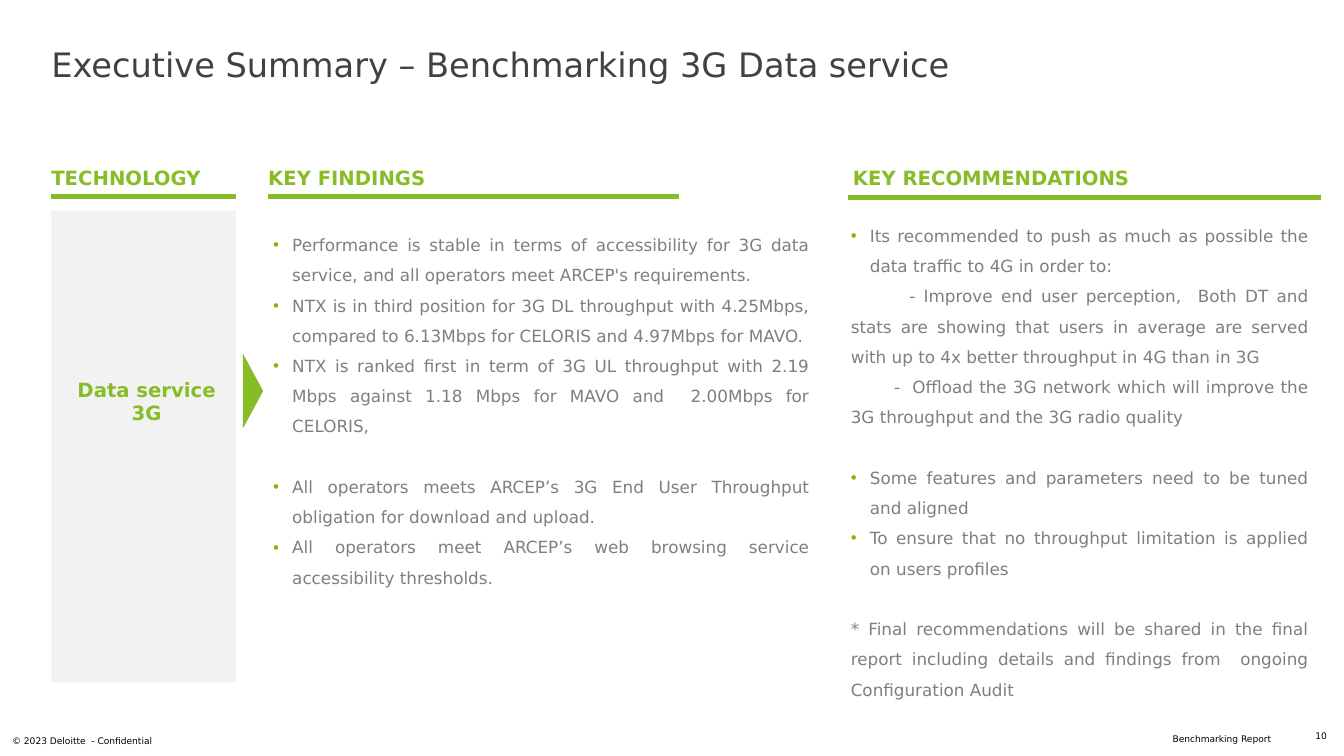
import pptx
import pptx.dml.color
import pptx.enum.shapes
import pptx.enum.text
import pptx.oxml.ns
import pptx.util
from lxml import etree

Inches = pptx.util.Inches
Pt = pptx.util.Pt
RGBColor = pptx.dml.color.RGBColor
ALIGN = pptx.enum.text.PP_ALIGN
ANCHOR = pptx.enum.text.MSO_ANCHOR
SHAPE = pptx.enum.shapes.MSO_SHAPE

GREEN = RGBColor(0x86, 0xBC, 0x25)
BULLET_GREEN = RGBColor(0x81, 0xBC, 0x00)
BODY_GRAY = RGBColor(0x7F, 0x7F, 0x7F)
TITLE_GRAY = RGBColor(0x41, 0x41, 0x41)
PANEL_GRAY = RGBColor(0xF2, 0xF2, 0xF2)
BLACK = RGBColor(0, 0, 0)
FONT = "DejaVu Sans"
BULLET_INDENT = 0.19
BLANK_LINE = 21.6

TITLE = "Executive Summary – Benchmarking 3G Data service"
TECHNOLOGY = "Data service 3G"

# heading, text left, rule left, rule right, rule top
HEADINGS = [
    ("TECHNOLOGY", 0.51, 0.51, 2.34, 1.95),
    ("KEY FINDINGS", 2.66, 2.66, 6.73, 1.95),
    ("KEY RECOMMENDATIONS", 8.46, 8.41, 13.1, 1.96),
]

# text, bulleted, first-line indent, space before
FINDINGS = [
    ("Performance is stable in terms of accessibility for 3G data service, and all operators meet ARCEP's requirements.", True, 0, 0),
    ("NTX is in third position for 3G DL throughput with 4.25Mbps, compared to 6.13Mbps for CELORIS and 4.97Mbps for MAVO.", True, 0, 0),
    ("NTX is ranked first in term of 3G UL throughput with 2.19 Mbps against 1.18 Mbps for MAVO and  2.00Mbps for CELORIS,", True, 0, 0),
    ("All operators meets ARCEP’s 3G End User Throughput obligation for download and upload.", True, 0, BLANK_LINE),
    ("All operators meet ARCEP’s web browsing service accessibility thresholds.", True, 0, 0),
]
RECOMMENDATIONS = [
    ("Its recommended to push as much as possible the data traffic to 4G in order to:", True, 0, 0),
    ("- Improve end user perception,  Both DT and stats are showing that users in average are served with up to 4x better throughput in 4G than in 3G", False, 0.58, 0),
    ("-  Offload the 3G network which will improve the 3G throughput and the 3G radio quality", False, 0.43, 0),
    ("Some features and parameters need to be tuned and aligned", True, 0, BLANK_LINE),
    ("To ensure that no throughput limitation is applied on users profiles", True, 0, 0),
    ("* Final recommendations will be shared in the final report including details and findings from  ongoing Configuration Audit", False, 0, BLANK_LINE),
]
BODIES = [
    (FINDINGS, (2.61, 2.18, 5.52, 5.23)),
    (RECOMMENDATIONS, (8.34, 2.09, 4.74, 4.43)),
]
FOOTERS = [
    ("Benchmarking Report", (11.63, 7.28, 1.71, 0.11), ALIGN.LEFT),
    ("10", (12.82, 7.25, 0.34, 0.11), ALIGN.RIGHT),
    ("© 2023 Deloitte  - Confidential", (0.12, 7.3, 4.5, 0.11), ALIGN.LEFT),
]


def set_margins(text_frame, left, top, right, bottom):
    text_frame.margin_left = Inches(left)
    text_frame.margin_top = Inches(top)
    text_frame.margin_right = Inches(right)
    text_frame.margin_bottom = Inches(bottom)


def style_runs(paragraph, size, color, bold=False):
    for run in paragraph.runs:
        run.font.name = FONT
        run.font.size = Pt(size)
        run.font.bold = bold
        run.font.color.rgb = color


def add_text_box(slide, box):
    text_frame = slide.shapes.add_textbox(*map(Inches, box)).text_frame
    text_frame.word_wrap = True
    return text_frame


def add_label(slide, text, box, size, color, bold=False, align=ALIGN.LEFT, spacing=1.0):
    text_frame = add_text_box(slide, box)
    set_margins(text_frame, 0, 0, 0, 0)
    text_frame.text = text
    paragraph = text_frame.paragraphs[0]
    paragraph.alignment = align
    paragraph.line_spacing = spacing
    style_runs(paragraph, size, color, bold)


def set_indent(paragraph, bulleted, first_line):
    properties = paragraph._p.get_or_add_pPr()
    if bulleted:
        properties.set("marL", str(Inches(BULLET_INDENT)))
        properties.set("indent", str(-Inches(BULLET_INDENT)))
        color = etree.SubElement(properties, pptx.oxml.ns.qn("a:buClr"))
        etree.SubElement(color, pptx.oxml.ns.qn("a:srgbClr"), val=str(BULLET_GREEN))
        etree.SubElement(properties, pptx.oxml.ns.qn("a:buFont"), typeface="Arial")
        etree.SubElement(properties, pptx.oxml.ns.qn("a:buChar"), char="•")
    else:
        properties.set("indent", str(Inches(first_line)))


def add_body(slide, items, box):
    text_frame = add_text_box(slide, box)
    set_margins(text_frame, 0.1, 0.05, 0.1, 0.05)
    text_frame.text = "\n".join(item[0] for item in items)
    for paragraph, (_, bulleted, first_line, before) in zip(text_frame.paragraphs, items):
        set_indent(paragraph, bulleted, first_line)
        paragraph.alignment = ALIGN.JUSTIFY
        paragraph.line_spacing = 1.5
        if before:
            paragraph.space_before = Pt(before)
        style_runs(paragraph, 12, BODY_GRAY)


def add_filled_shape(slide, kind, box, color):
    shape = slide.shapes.add_shape(kind, *map(Inches, box))
    shape.shadow.inherit = False
    shape.fill.solid()
    shape.fill.fore_color.rgb = color
    shape.line.fill.background()
    return shape


def add_rule(slide, left, right, top):
    rule = slide.shapes.add_connector(
        pptx.enum.shapes.MSO_CONNECTOR.STRAIGHT,
        Inches(left), Inches(top), Inches(right), Inches(top))
    rule.line.color.rgb = GREEN
    rule.line.width = Pt(3)
    etree.SubElement(rule._element.spPr, pptx.oxml.ns.qn("a:effectLst"))


def add_technology_panel(slide):
    panel = add_filled_shape(slide, SHAPE.RECTANGLE, (0.51, 2.09, 1.83, 4.68), PANEL_GRAY)
    text_frame = panel.text_frame
    text_frame.word_wrap = True
    text_frame.vertical_anchor = ANCHOR.MIDDLE
    set_margins(text_frame, 0.14, 0.08, 0.08, 0.98)
    text_frame.text = TECHNOLOGY
    text_frame.paragraphs[0].alignment = ALIGN.CENTER
    style_runs(text_frame.paragraphs[0], 14, GREEN, True)
    arrow = add_filled_shape(slide, SHAPE.ISOSCELES_TRIANGLE, (2.14, 3.78, 0.74, 0.2), GREEN)
    arrow.rotation = 90


def main():
    presentation = pptx.Presentation()
    presentation.slide_width = Inches(13.33)
    presentation.slide_height = Inches(7.5)
    slide = presentation.slides.add_slide(presentation.slide_layouts[6])

    add_label(slide, TITLE, (0.51, 0.44, 12.31, 0.37), 24, TITLE_GRAY)
    for text, box, align in FOOTERS:
        add_label(slide, text, box, 6.5, BLACK, align=align)
    add_technology_panel(slide)
    for text, text_left, rule_left, rule_right, top in HEADINGS:
        add_label(slide, text, (text_left, 1.67, 4.07, 0.21), 14, GREEN, True, spacing=0.9)
        add_rule(slide, rule_left, rule_right, top)
    for items, box in BODIES:
        add_body(slide, items, box)

    presentation.save("out.pptx")


if __name__ == "__main__":
    main()
